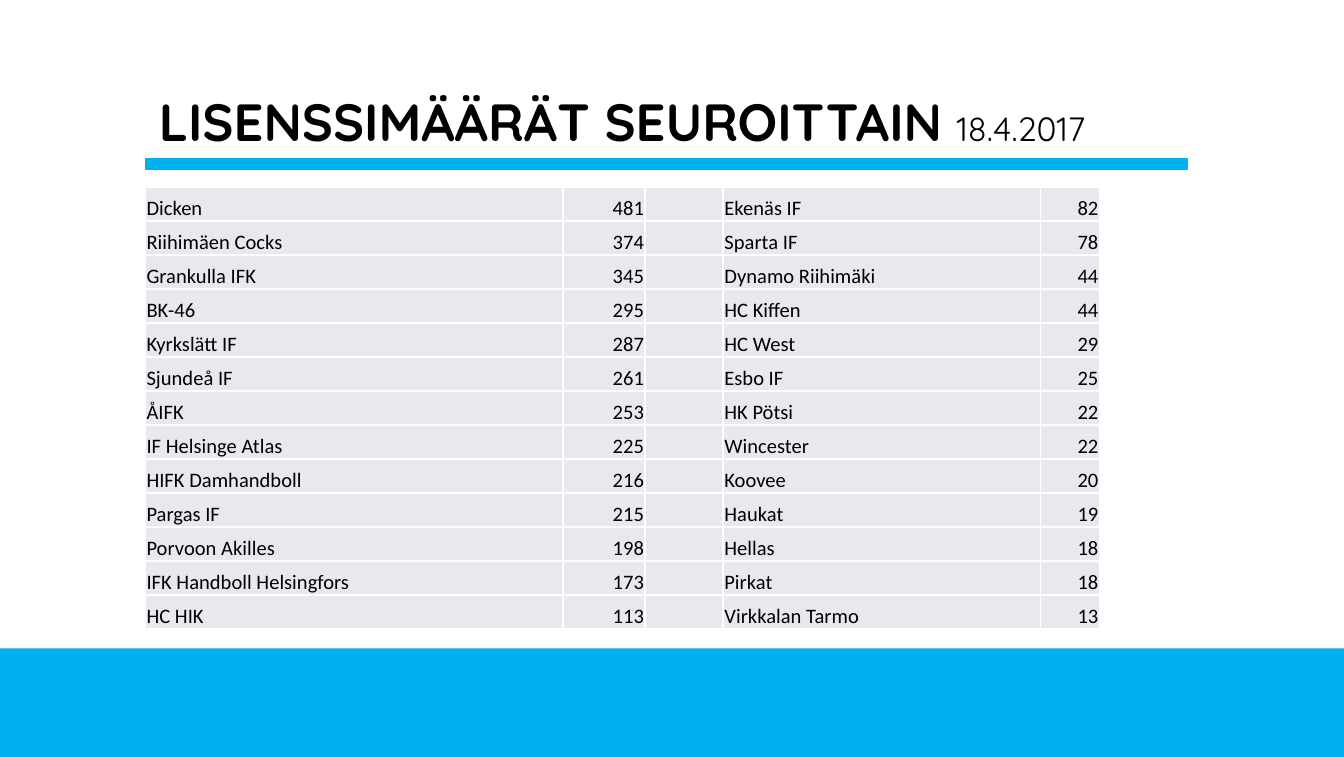
from dataclasses import dataclass

from lxml.etree import SubElement
from pptx import Presentation
from pptx.dml.color import RGBColor
from pptx.enum.shapes import MSO_CONNECTOR as Connector, MSO_SHAPE as Shape
from pptx.enum.text import MSO_ANCHOR as Anchor, MSO_AUTO_SIZE as AutoSize, PP_ALIGN as Align
from pptx.oxml import parse_xml
from pptx.oxml.ns import nsdecls, qn
from pptx.util import Pt


@dataclass(frozen=True)
class Theme:
    blue: str = "00B0F0"
    cell: str = "E7E9EF"
    border: str = "FFFFFF"
    text: str = "000000"
    title_font: str = "Quicksand"
    table_font: str = "Calibri"
    title_size: float = 28
    date_size: float = 18
    table_size: float = 11


THEME = Theme()
SLIDE_W, SLIDE_H = 720, 405.36
LEFT, CONTENT_W = 77.9, 558.7
RULE_Y, BAND_TOP = 87.8, 347.2
TABLE_TOP, ROW_H = 100.2, 18.22
COLUMN_WIDTHS = [223.8, 43.9, 41.9, 169.9, 31.7]
NUMBER_COLUMNS = (1, 4)

LARGER_CLUBS = [
    ("Dicken", 481), ("Riihimäen Cocks", 374), ("Grankulla IFK", 345),
    ("BK-46", 295), ("Kyrkslätt IF", 287), ("Sjundeå IF", 261),
    ("ÅIFK", 253), ("IF Helsinge Atlas", 225), ("HIFK Damhandboll", 216),
    ("Pargas IF", 215), ("Porvoon Akilles", 198),
    ("IFK Handboll Helsingfors", 173), ("HC HIK", 113),
]
SMALLER_CLUBS = [
    ("Ekenäs IF", 82), ("Sparta IF", 78), ("Dynamo Riihimäki", 44),
    ("HC Kiffen", 44), ("HC West", 29), ("Esbo IF", 25), ("HK Pötsi", 22),
    ("Wincester", 22), ("Koovee", 20), ("Haukat", 19), ("Hellas", 18),
    ("Pirkat", 18), ("Virkkalan Tarmo", 13),
]


def rgb(value):
    return RGBColor.from_string(value)


def apply(target, values):
    for name, value in values.items():
        setattr(target, name, value)


def add_run(paragraph, text, font, size, bold=False):
    run = paragraph.add_run()
    run.text = text
    apply(run.font, {"name": font, "size": Pt(size), "bold": bold})
    run.font.color.rgb = rgb(THEME.text)


def add_band(slide):
    band = slide.shapes.add_shape(
        Shape.RECTANGLE, 0, Pt(BAND_TOP), Pt(SLIDE_W), Pt(SLIDE_H - BAND_TOP))
    band.fill.solid()
    band.fill.fore_color.rgb = rgb(THEME.blue)
    band.line.fill.background()
    band.shadow.inherit = False
    # Soft shadow straight below the band
    effects = band.element.spPr.find(qn("a:effectLst"))
    shadow = SubElement(effects, qn("a:outerShdw"), blurRad=str(Pt(3.1)),
                        dist=str(Pt(1.8)), dir="5400000", rotWithShape="0")
    color = SubElement(shadow, qn("a:srgbClr"), val=THEME.text)
    SubElement(color, qn("a:alpha"), val="35000")


def add_rule(slide):
    rule = slide.shapes.add_connector(
        Connector.STRAIGHT, Pt(LEFT), Pt(RULE_Y), Pt(LEFT + CONTENT_W), Pt(RULE_Y))
    rule.line.color.rgb = rgb(THEME.blue)
    rule.line.width = Pt(6)
    SubElement(rule.element.spPr, qn("a:effectLst"))


def set_title(slide, heading, date):
    title = slide.shapes.title
    apply(title, {"left": Pt(LEFT), "top": 0, "width": Pt(CONTENT_W), "height": Pt(85)})
    apply(title.text_frame, {"vertical_anchor": Anchor.BOTTOM, "word_wrap": True,
                             "auto_size": AutoSize.NONE})
    paragraph = title.text_frame.paragraphs[0]
    paragraph.alignment = Align.LEFT
    add_run(paragraph, heading, THEME.title_font, THEME.title_size, bold=True)
    add_run(paragraph, date, THEME.title_font, THEME.date_size)


def add_borders(cell):
    properties = cell._tc.get_or_add_tcPr()
    for index, side in enumerate(("lnL", "lnR", "lnT", "lnB")):
        properties.insert(index, parse_xml(
            f'<a:{side} {nsdecls("a")} w="{Pt(1)}"><a:solidFill>'
            f'<a:srgbClr val="{THEME.border}"/></a:solidFill></a:{side}>'))


def fill_cell(cell, value, alignment):
    apply(cell, {"margin_left": Pt(0.6), "margin_right": Pt(0.6),
                 "margin_top": Pt(0.6), "margin_bottom": 0,
                 "vertical_anchor": Anchor.BOTTOM})
    cell.fill.solid()
    cell.fill.fore_color.rgb = rgb(THEME.cell)
    add_borders(cell)
    paragraph = cell.text_frame.paragraphs[0]
    paragraph.alignment = alignment
    if value:
        add_run(paragraph, str(value), THEME.table_font, THEME.table_size)
    else:
        # Keeps an empty cell from stretching its row
        SubElement(paragraph._p, qn("a:endParaRPr"), sz=str(int(THEME.table_size * 100)))


def add_club_table(slide):
    rows = [(*larger, "", *smaller)
            for larger, smaller in zip(LARGER_CLUBS, SMALLER_CLUBS)]
    table = slide.shapes.add_table(
        len(rows), len(COLUMN_WIDTHS), Pt(LEFT), Pt(TABLE_TOP),
        Pt(sum(COLUMN_WIDTHS)), Pt(ROW_H * len(rows))).table
    apply(table, {"first_row": False, "horz_banding": False})
    for column, width in zip(table.columns, COLUMN_WIDTHS):
        column.width = Pt(width)
    for row_index, row in enumerate(rows):
        table.rows[row_index].height = Pt(ROW_H)
        for column_index, value in enumerate(row):
            alignment = Align.RIGHT if column_index in NUMBER_COLUMNS else Align.LEFT
            fill_cell(table.cell(row_index, column_index), value, alignment)


def main():
    deck = Presentation()
    apply(deck, {"slide_width": Pt(SLIDE_W), "slide_height": Pt(SLIDE_H)})
    slide = deck.slides.add_slide(deck.slide_layouts[5])

    # Frame of the slide
    add_band(slide)
    add_rule(slide)

    # Heading and licence counts
    set_title(slide, "LISENSSIMÄÄRÄT SEUROITTAIN ", "18.4.2017")
    add_club_table(slide)
    deck.save("out.pptx")


if __name__ == "__main__":
    main()
